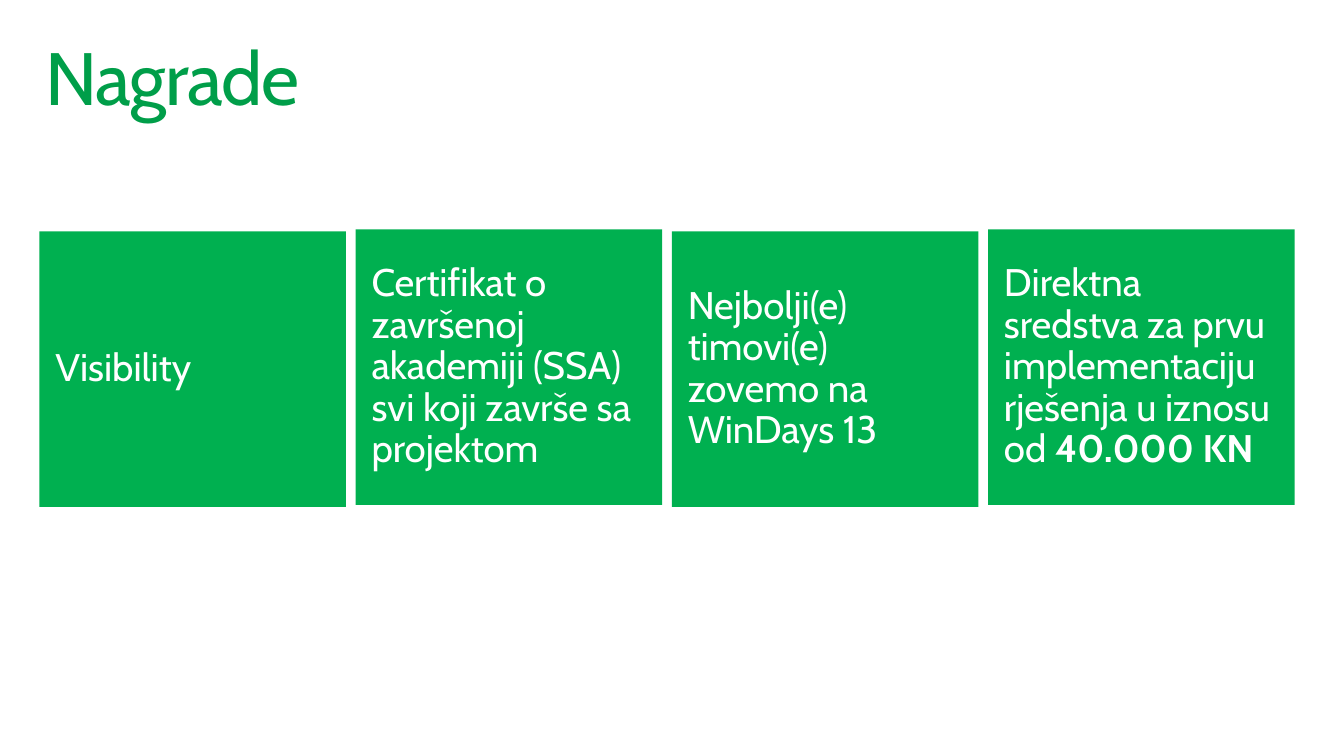
import dataclasses

import pptx
import pptx.dml.color
import pptx.enum.shapes
import pptx.enum.text
import pptx.util

EMU_PER_PX = 9144  # 100 px to the inch
FONT = "Cabin"
TITLE_GREEN = pptx.dml.color.RGBColor(0x00, 0x9E, 0x49)
CARD_GREEN = pptx.dml.color.RGBColor(0x00, 0xB0, 0x50)
WHITE = pptx.dml.color.RGBColor(0xFF, 0xFF, 0xFF)

CARD_LEFT, CARD_STEP = 40, 320
CARD_WIDTH, CARD_HEIGHT = 310, 279


@dataclasses.dataclass(frozen=True)
class Prize:
    top: int
    text: str
    amount: str = ""


PRIZES = [
    Prize(234, "Visibility"),
    Prize(232, "Certifikat o završenoj akademiji (SSA) svi koji završe sa projektom"),
    Prize(234, "Nejbolji(e) timovi(e) zovemo na WinDays 13"),
    Prize(232, "Direktna sredstva za prvu implementaciju rješenja u iznosu od ", "40.000 KN"),
]


def px(length: int) -> pptx.util.Emu:
    return pptx.util.Emu(length * EMU_PER_PX)


def prepare_frame(frame, anchor):
    """Set the shared margins and paragraph format; return the first paragraph."""
    frame.word_wrap = True
    frame.auto_size = pptx.enum.text.MSO_AUTO_SIZE.NONE
    frame.vertical_anchor = anchor
    frame.margin_left = frame.margin_right = px(16)
    frame.margin_top = frame.margin_bottom = px(10)
    para = frame.paragraphs[0]
    para.alignment = pptx.enum.text.PP_ALIGN.LEFT
    para.line_spacing = 0.9
    para.space_before = pptx.util.Pt(0)
    return para


def add_span(para, text: str, *, size: int, color: pptx.dml.color.RGBColor,
             bold: bool = False, spacing: int = 0) -> None:
    span = para.add_run()
    span.text = text
    span.font.name = FONT
    span.font.size = pptx.util.Pt(size)
    span.font.bold = bold
    span.font.color.rgb = color
    if spacing:
        span.font._element.set("spc", str(spacing))


def add_title(page, text: str) -> None:
    box = page.shapes.title
    box.left, box.top, box.width, box.height = px(30), px(32), px(1300), px(100)
    para = prepare_frame(box.text_frame, pptx.enum.text.MSO_ANCHOR.TOP)
    add_span(para, text, size=54, color=TITLE_GREEN, spacing=-100)


def add_card(page, prize: Prize, column: int) -> None:
    box = page.shapes.add_shape(
        pptx.enum.shapes.MSO_SHAPE.RECTANGLE,
        px(CARD_LEFT + column * CARD_STEP), px(prize.top), px(CARD_WIDTH), px(CARD_HEIGHT))
    box.shadow.inherit = False
    box.fill.solid()
    box.fill.fore_color.rgb = CARD_GREEN
    box.line.fill.background()
    para = prepare_frame(box.text_frame, pptx.enum.text.MSO_ANCHOR.MIDDLE)
    add_span(para, prize.text, size=28, color=WHITE)
    if prize.amount:
        add_span(para, prize.amount, size=28, color=WHITE, bold=True)


def main() -> None:
    deck = pptx.Presentation()
    deck.slide_width, deck.slide_height = px(1360), px(765)
    page = deck.slides.add_slide(deck.slide_layouts[5])  # Title Only

    # Title
    add_title(page, "Nagrade")

    # Row of prize cards
    for column, prize in enumerate(PRIZES):
        add_card(page, prize, column)

    deck.save("out.pptx")


if __name__ == "__main__":
    main()
